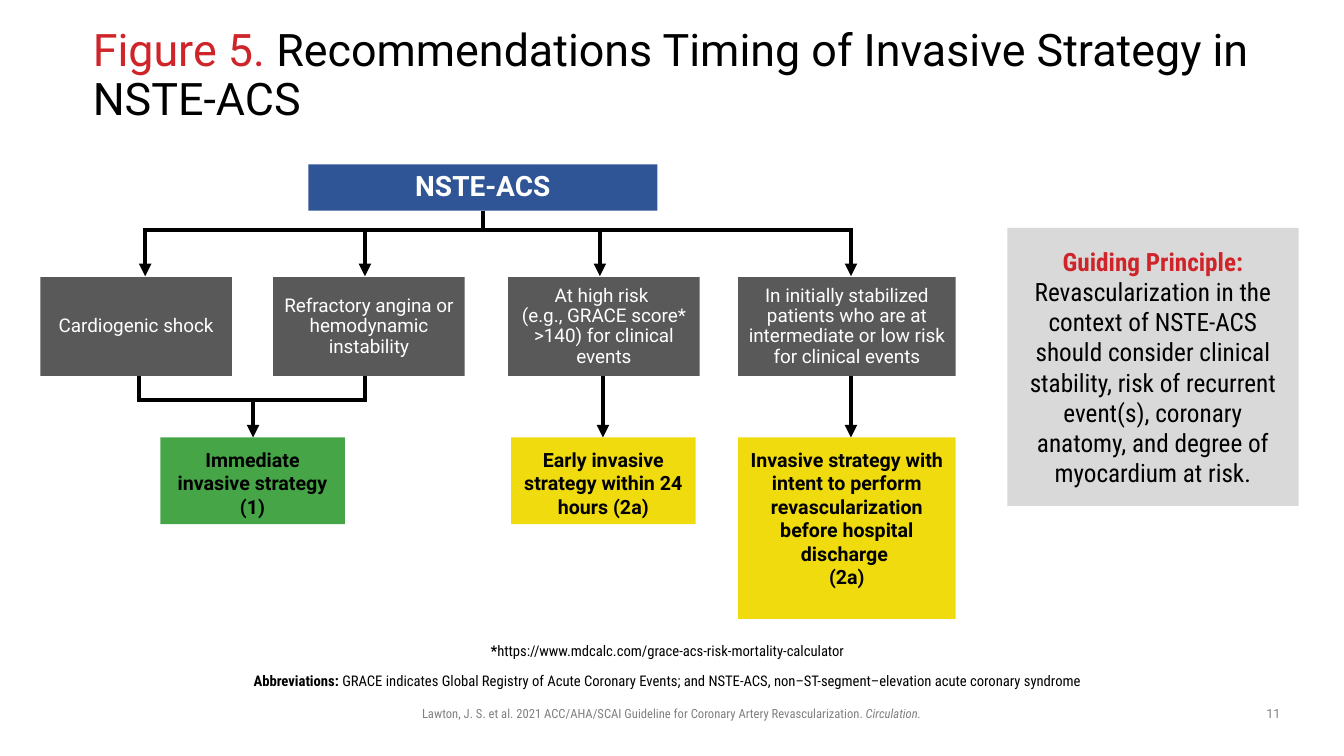
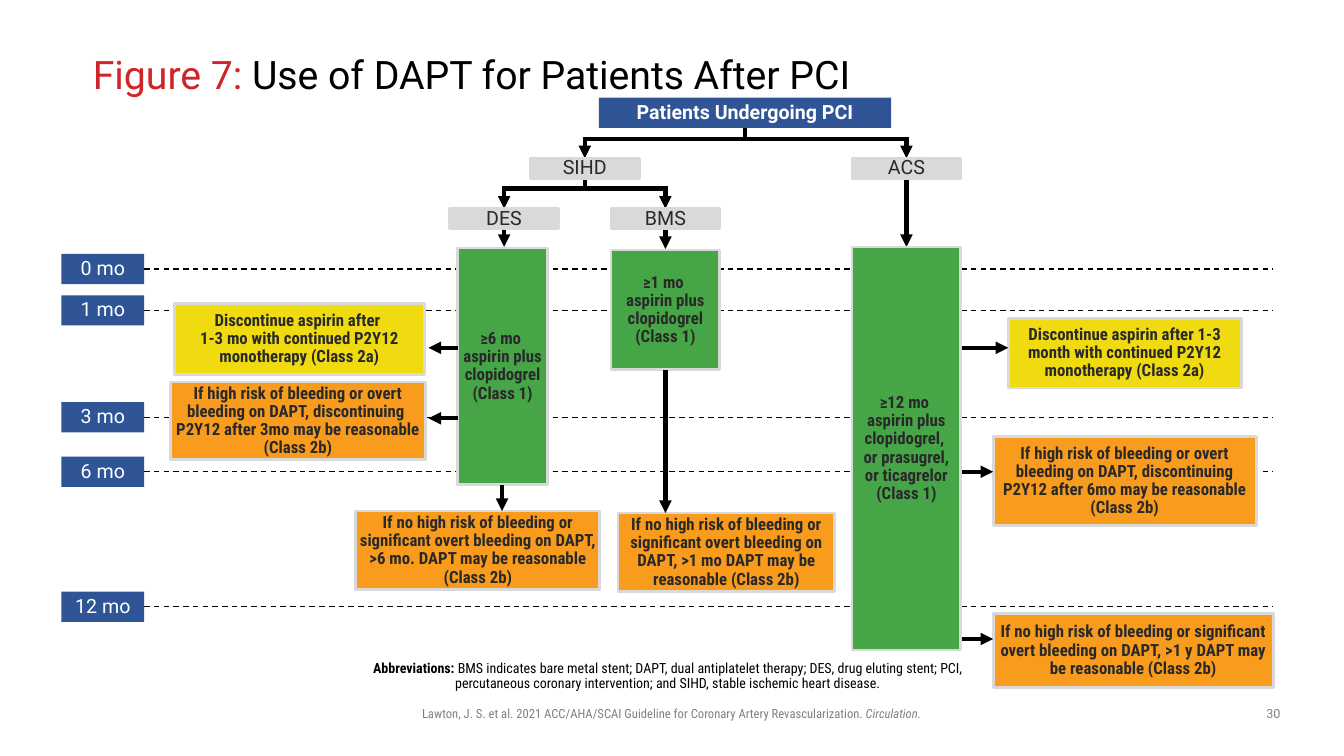
from dataclasses import dataclass
from typing import Any

from pptx import Presentation
from pptx.dml.color import RGBColor
from pptx.enum.dml import MSO_LINE
from pptx.enum.shapes import MSO_CONNECTOR, MSO_SHAPE
from pptx.enum.text import MSO_ANCHOR, MSO_AUTO_SIZE, PP_ALIGN
from pptx.oxml.ns import qn
from pptx.util import Inches, Pt
from lxml.etree import SubElement

RED, BLUE, BLACK, WHITE = "CF2429", "2F5597", "000000", "FFFFFF"
DARK, PALE, INK, MUTE = "595959", "D9D9D9", "292929", "808080"
GREEN, LEMON, GOLD, AMBER = "46A547", "F0DB0E", "F0DA10", "F99B1C"
SANS, SLIM = "Roboto", "Roboto Condensed"


def look(size, color, name=SANS, bold=False):
    return {"size": Pt(size), "name": name, "bold": bold, "color": color}


HEAD = look(20, WHITE, bold=True)
ROOT = look(14, WHITE, bold=True)
CASE = look(13.5, WHITE)
PLAN = look(14, BLACK, bold=True)
GUIDE = look(18, BLACK, SLIM)
TIME = look(14, WHITE)
GROUP = look(14, INK)
CARE = look(12, INK, SLIM, True)
FOOT = look(9, MUTE, SLIM)
PAGE = look(9, MUTE)
BOLD = {"bold": True}


def hue(code):
    return RGBColor.from_string(code)


def apply(item, values):
    for key, value in values.items():
        setattr(item, key, value)


def write(shape, text, style, align=PP_ALIGN.CENTER, space=0.9, gap=0,
          inset=(0, 0, 0, 0), anchor=MSO_ANCHOR.MIDDLE):
    frame = shape.text_frame
    sides = ("margin_left", "margin_top", "margin_right", "margin_bottom")
    apply(frame, {"word_wrap": True, "auto_size": MSO_AUTO_SIZE.NONE,
                  "vertical_anchor": anchor})
    apply(frame, {side: Inches(size) for side, size in zip(sides, inset)})
    lines = text.split("\n") if isinstance(text, str) else text
    for spot, line in enumerate(lines):
        para = frame.add_paragraph() if spot else frame.paragraphs[0]
        apply(para, {"alignment": align, "line_spacing": space,
                     "space_before": Pt(gap if spot else 0)})
        for words, extra in [(line, {})] if isinstance(line, str) else line:
            run = para.add_run()
            run.text = words
            values = {**style, **extra}
            run.font.color.rgb = hue(values.pop("color"))
            apply(run.font, values)


@dataclass
class Pane:
    slide: Any
    left: float
    top: float

    def spot(self, x, y):
        return Inches(self.left + x), Inches(self.top + y)

    def box(self, x, y, w, h, fill, text, style, edge=None, **more):
        shape = self.slide.shapes.add_shape(
            MSO_SHAPE.RECTANGLE, *self.spot(x, y), Inches(w), Inches(h))
        shape.shadow.inherit = False
        shape.fill.solid()
        shape.fill.fore_color.rgb = hue(fill)
        if edge:
            shape.line.color.rgb = hue(edge)
            shape.line.width = Pt(2)
        else:
            shape.line.fill.background()
        write(shape, text, style, **more)

    def label(self, w, h, text, style, **more):
        shape = self.slide.shapes.add_textbox(
            *self.spot(0, 0), Inches(w), Inches(h))
        write(shape, text, style, anchor=MSO_ANCHOR.TOP, **more)

    def route(self, *points, width=3, dash=None, arrow=True):
        spots = [self.spot(*point) for point in points]
        shapes = self.slide.shapes
        if len(spots) == 2:
            shape = shapes.add_connector(
                MSO_CONNECTOR.STRAIGHT, *spots[0], *spots[1])
        else:
            form = shapes.build_freeform(*spots[0])
            form.add_line_segments(spots[1:], close=False)
            shape = form.convert_to_shape()
            shape.fill.background()
        line = shape.line
        line.color.rgb = hue(BLACK)
        apply(line, {"width": Pt(width), "dash_style": dash})
        edge = shape._element.spPr.find(qn("a:ln"))
        SubElement(edge, qn("a:miter"), lim="800000")
        if arrow:
            SubElement(edge, qn("a:tailEnd"), type="triangle")
        SubElement(shape._element.spPr, qn("a:effectLst"))

    def fork(self, x, y, bus, end, tips):
        for tip in tips:
            self.route((x, y), (x, bus), (tip, bus), (tip, end))


def start(deck, mark, title, size, page):
    slide = deck.slides.add_slide(deck.slide_layouts[5])
    shape = slide.shapes.title
    apply(shape, {"left": Inches(0.92), "top": Inches(0.4),
                  "width": Inches(11.5), "height": Inches(0.72)})
    write(shape, [[(mark, {"color": RED}), (title, {})]],
          look(size, BLACK), align=PP_ALIGN.LEFT)
    pad = (0.1, 0.05, 0.1, 0.05)
    cite = ("Lawton, J. S. et al. 2021 ACC/AHA/SCAI Guideline for "
            "Coronary Artery Revascularization. ")
    Pane(slide, 3.17, 6.95).label(
        6.98, 0.25, [[(cite, {}), ("Circulation.", {"italic": True})]],
        FOOT, space=1, inset=pad)
    Pane(slide, 12.42, 6.95).label(0.42, 0.26, page, PAGE, space=1, inset=pad)
    return slide


def notes(slide, x, y, w, size, lines):
    text = [[(mark, BOLD), (words, {})] for mark, words in lines]
    Pane(slide, x, y).label(w, 0.3, text, look(size, BLACK, SLIM), gap=10,
                            inset=(0, 0.05, 0.1, 0.05))


def flow(slide, x, y):
    pane = Pane(slide, x, y)
    pane.fork(4.39, 0.46, 0.65, 1.11, (1.04, 3.22, 5.55, 8.04))
    pane.route((0.98, 2.1), (0.98, 2.34), (3.22, 2.34), (3.22, 2.1),
               arrow=False)
    for col, top in ((2.11, 2.34), (5.58, 2.1), (8.04, 2.1)):
        pane.route((col, top), (col, 2.71))
    pane.box(2.66, 0, 3.46, 0.46, BLUE, "NSTE-ACS", HEAD)
    cases = (
        (0, 1.9, "Cardiogenic shock"),
        (2.31, 1.9, "Refractory angina or hemodynamic instability"),
        (4.64, 1.9, "At high risk \n"
                    "(e.g., GRACE score* >140) for clinical events"),
        (6.92, 2.16, "In initially stabilized patients who are at "
                     "intermediate or low risk for clinical events"),
    )
    for col, wide, text in cases:
        pane.box(col, 1.12, wide, 0.98, DARK, text, CASE)
    plans = (
        (1.19, 1.83, 0.86, GREEN, "Immediate invasive strategy (1)"),
        (4.67, 1.83, 0.86, LEMON,
         "Early invasive strategy within 24 hours (2a)"),
        (6.92, 2.16, 1.8, LEMON,
         "Invasive strategy with intent to perform revascularization "
         "before hospital discharge \n(2a)"),
    )
    for col, wide, high, fill, text in plans:
        pane.box(col, 2.71, wide, high, fill, text, PLAN, space=1,
                 inset=(0.1, 0.1, 0.1, 0.05), anchor=MSO_ANCHOR.TOP)


def guide(slide, x, y):
    text = [[("Guiding Principle: ", {"bold": True, "color": RED}),
             ("Revascularization in the context of NSTE-ACS should consider "
              "clinical stability, risk of recurrent event(s), coronary "
              "anatomy, and degree of myocardium at risk.", {})]]
    Pane(slide, x, y).box(0, 0, 2.89, 2.76, PALE, text, GUIDE, space=1,
                          inset=(0.18, 0, 0.18, 0))


def scale(slide, x, y):
    pane = Pane(slide, x, y)
    rows = ((0, 0), (1, 0.41), (3, 1.47), (6, 2.01), (12, 3.35))
    for month, row in rows:
        pane.route((0.82, row), (12.02, row), width=1,
                   dash=MSO_LINE.DASH, arrow=False)
        pane.box(0, row - 0.15, 0.82, 0.3, BLUE, f"{month} mo", TIME)


def tree(slide, x, y):
    pane = Pane(slide, x, y)
    pane.fork(2.93, 0.3, 0.41, 0.6, (1.34, 4.53))
    pane.fork(1.34, 0.79, 0.9, 1.1, (0.54, 2.14))
    for col, top, end in ((0.54, 1.3, 1.48), (2.14, 1.3, 1.5),
                          (4.53, 0.8, 1.48)):
        pane.route((col, top), (col, end))
    pane.box(1.48, 0, 2.9, 0.3, BLUE, "Patients Undergoing PCI", ROOT)
    for col, row, text in ((0.8, 0.6, "SIHD"), (3.99, 0.6, "ACS"),
                           (0, 1.1, "DES"), (1.6, 1.1, "BMS")):
        pane.box(col, row, 1.08, 0.2, PALE, text, GROUP, edge=PALE)


def care(slide, x, y):
    pane = Pane(slide, x, y)
    high = "If high risk of bleeding or overt bleeding on DAPT, discontinuing "
    low = "If no high risk of bleeding or significant overt bleeding on DAPT, "
    end = "DAPT may be reasonable (Class 2b)"
    boxes = (
        (2.85, 0.01, 0.89, 2.35, GREEN,
         "≥6 mo \naspirin plus clopidogrel (Class 1)"),
        (4.37, 0.03, 1.08, 1.19, GREEN,
         "≥1 mo \naspirin plus clopidogrel (Class 1)"),
        (6.76, 0, 1.08, 4, GREEN,
         "≥12 mo \naspirin plus clopidogrel, \nor prasugrel,\n"
         "or ticagrelor (Class 1)"),
        (0.04, 0.56, 2.48, 0.71, GOLD,
         "Discontinue aspirin after \n"
         "1-3 mo with continued P2Y12 monotherapy (Class 2a)"),
        (8.31, 0.71, 2.31, 0.69, GOLD,
         "Discontinue aspirin after 1-3 month with continued P2Y12 "
         "monotherapy (Class 2a)"),
        (0, 1.34, 2.53, 0.77, AMBER,
         high + "\nP2Y12 after 3mo may be reasonable (Class 2b)"),
        (8.16, 1.88, 2.61, 0.88, AMBER,
         high + "P2Y12 after 6mo may be reasonable (Class 2b)"),
        (1.84, 2.62, 2.42, 0.78, AMBER, low + ">6 mo. " + end),
        (4.44, 2.64, 2.15, 0.78, AMBER, low + ">1 mo " + end),
        (8.16, 3.64, 2.78, 0.73, AMBER, low + ">1 y " + end),
    )
    for col, row, wide, tall, fill, text in boxes:
        pane.box(col, row, wide, tall, fill, text, CARE, edge=PALE)
    for row in (1, 1.7):
        pane.route((2.85, row), (2.56, row))
    for row, tip in ((1, 8.31), (2.23, 8.16), (3.89, 8.16)):
        pane.route((7.85, row), (tip, row))
    for col, top, tip in ((3.29, 2.36, 2.62), (4.91, 1.22, 2.64)):
        pane.route((col, top), (col, tip))


def timing(deck):
    slide = start(deck, "Figure 5. ", "Recommendations Timing of Invasive "
                  "Strategy in NSTE-ACS", 32, "11")
    flow(slide, 0.4, 1.63)
    guide(slide, 9.99, 2.26)
    notes(slide, 0.92, 6.34, 11.5, 10.5, (
        ("*", "https://www.mdcalc.com/grace-acs-risk-mortality-calculator"),
        ("Abbreviations: ",
         "GRACE indicates Global Registry of Acute Coronary Events; and "
         "NSTE-ACS, non–ST-segment–elevation acute coronary syndrome")))


def therapy(deck):
    slide = start(deck, "Figure 7: ", "Use of DAPT for Patients After PCI",
                  28, "30")
    scale(slide, 0.61, 2.67)
    tree(slide, 4.46, 0.97)
    care(slide, 1.69, 2.45)
    notes(slide, 3.69, 6.51, 5.96, 10, (
        ("Abbreviations: ",
         "BMS indicates bare metal stent; DAPT, dual antiplatelet therapy; "
         "DES, drug eluting stent; PCI, percutaneous coronary intervention; "
         "and SIHD, stable ischemic heart disease."),))


def main():
    deck = Presentation()
    apply(deck, {"slide_width": Inches(13.33), "slide_height": Inches(7.5)})
    timing(deck)
    therapy(deck)
    deck.save("out.pptx")


if __name__ == "__main__":
    main()
